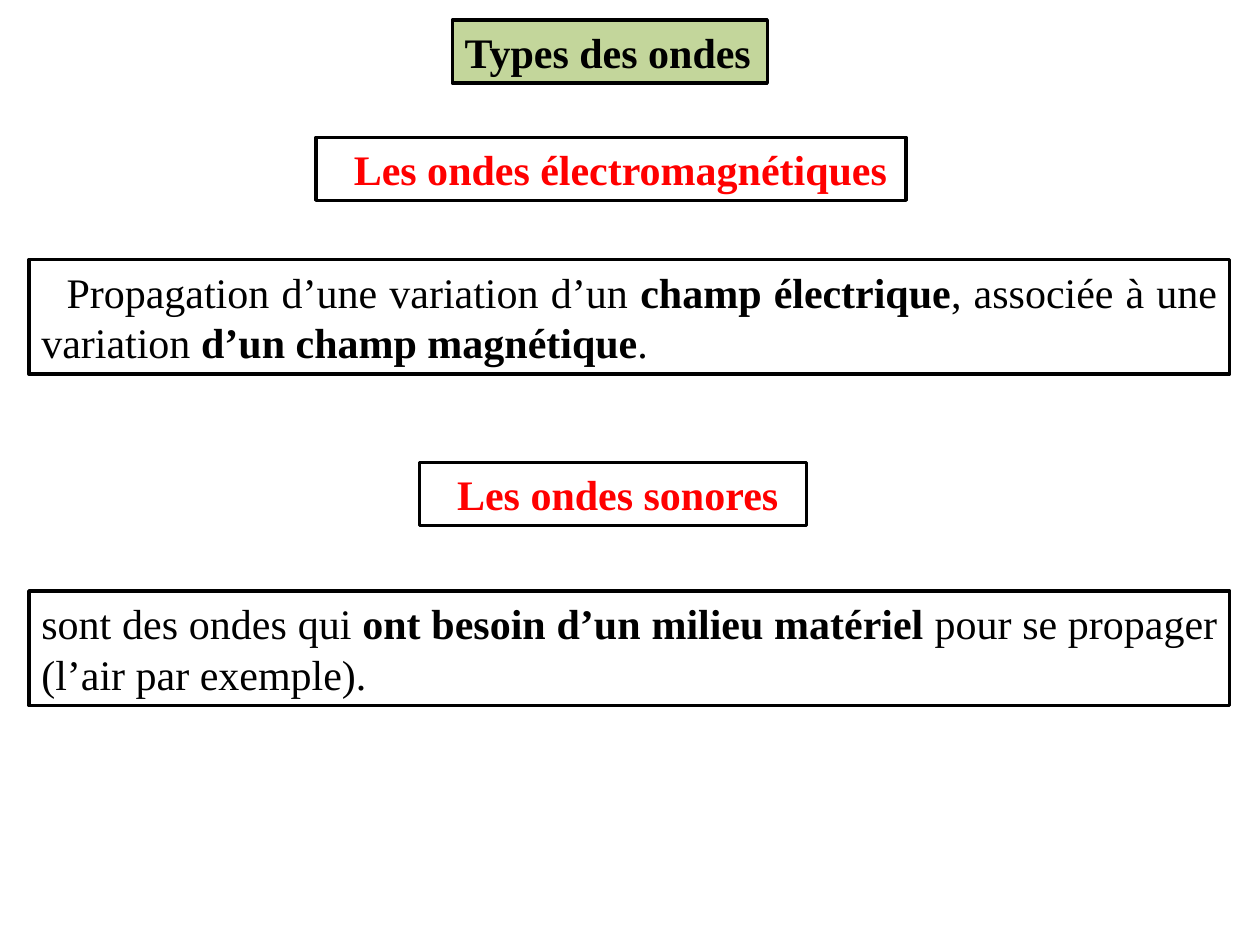
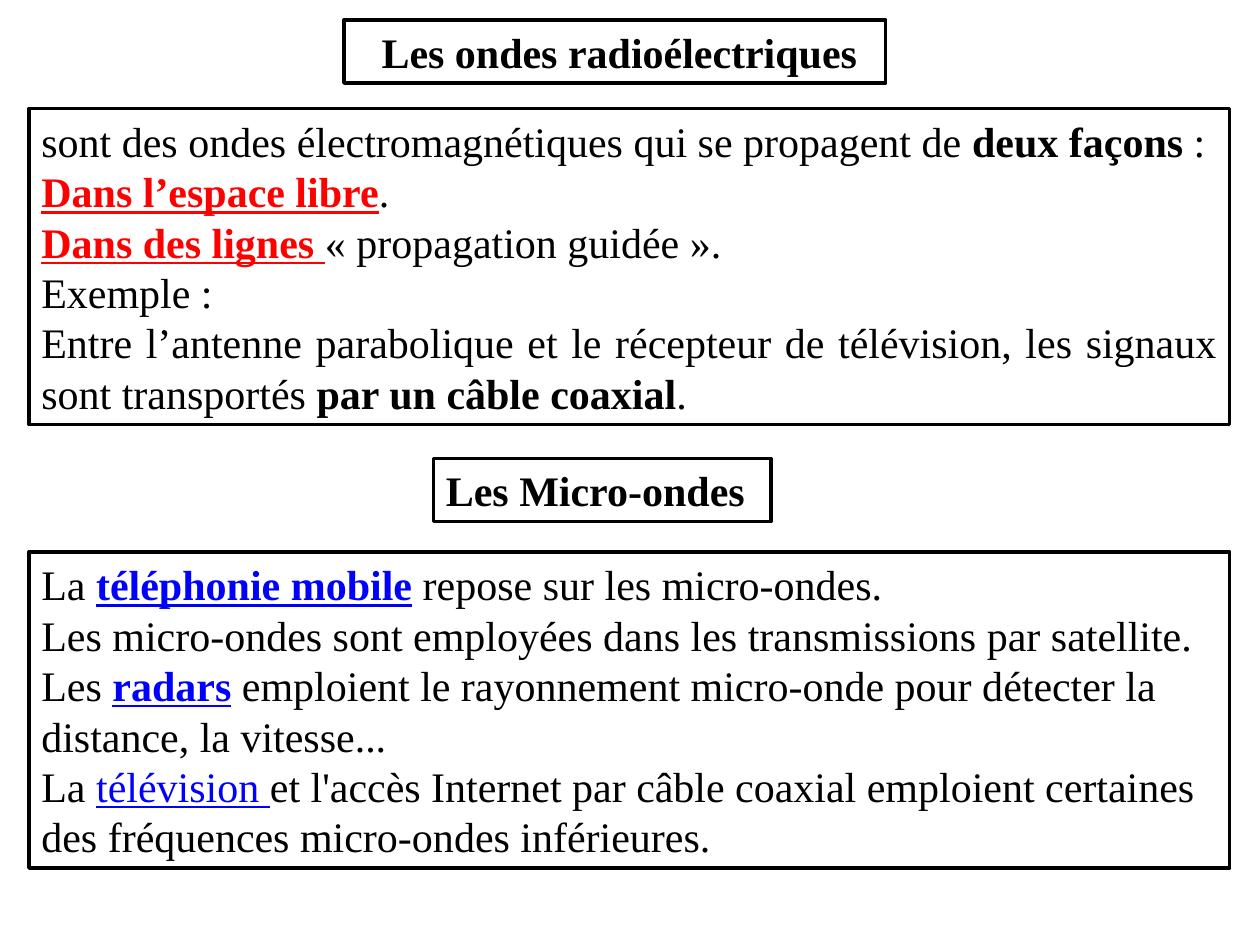
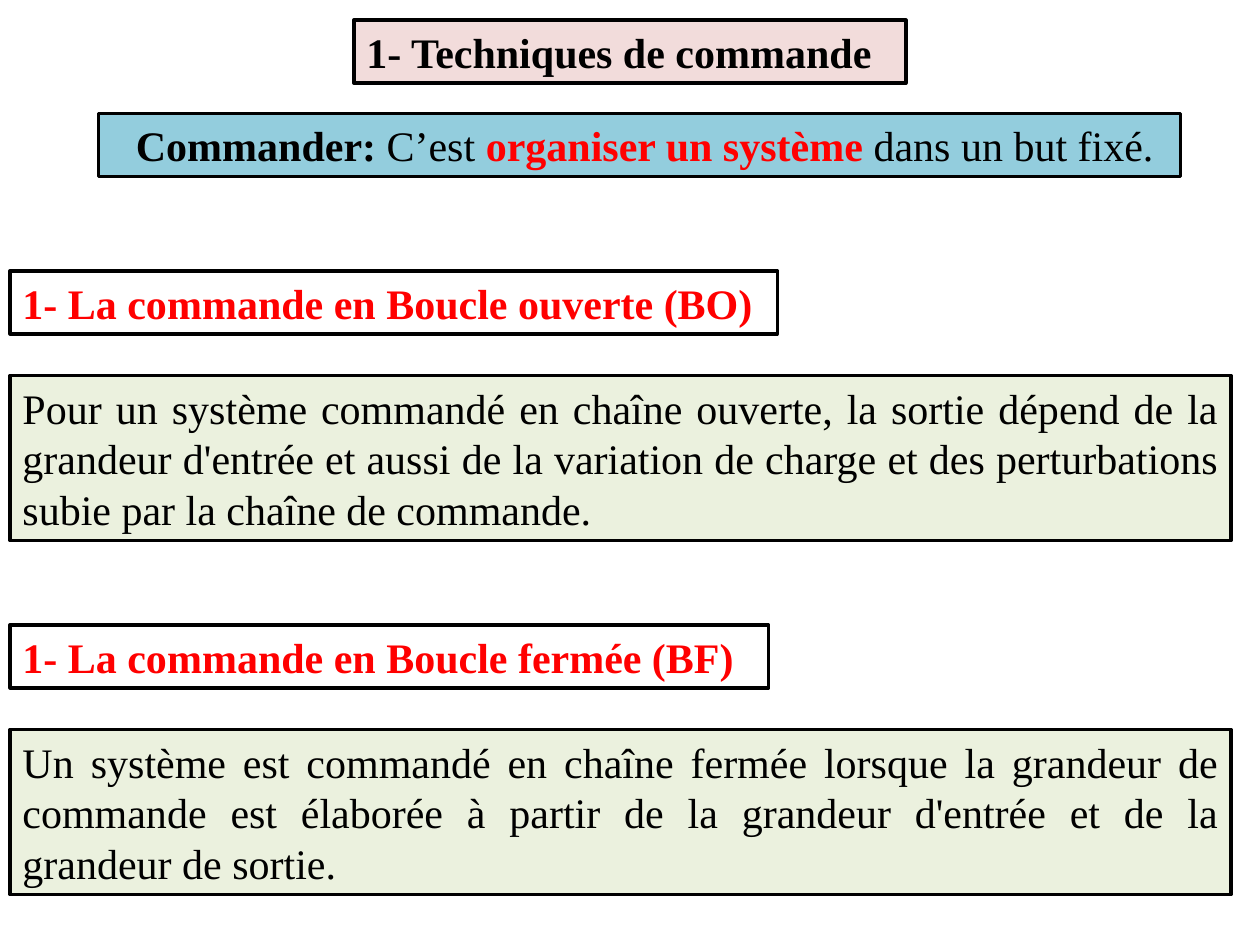
from pptx import Presentation
from pptx.dml.color import RGBColor
from pptx.enum import shapes, text
from pptx.util import Inches, Pt

COLORS = {
    "black": "000000", "white": "FFFFFF", "red": "FF0000", "blue": "0000FF",
    "green": "C3D69B", "pale_green": "EBF1DE", "pink": "F2DCDB", "sky": "93CDDD",
}
FONT = "Times New Roman"
TITLE_TOP = 0.16
HEADING_HEIGHT = 0.5
LINE_HEIGHT = 0.4
BODY_PADDING = 0.11
FIRST_LINE_INDENT = 0.2

# Run styles: colour, bold, underline
PLAIN = ("black", False, False)
BOLD = ("black", True, False)
RED = ("red", True, False)
RED_KEY = ("red", True, True)
BLUE_KEY = ("blue", True, True)
BLUE_TERM = ("blue", False, True)


def rgb(name):
    return RGBColor.from_string(COLORS[name])


def framed_text(slide, box, paragraphs, fill="white", justify=False, indent=False):
    """Black-framed rectangle; each paragraph is a list of (words, style)."""
    frame = slide.shapes.add_shape(shapes.MSO_SHAPE.RECTANGLE, *map(Inches, box))
    frame.shadow.inherit = False
    frame.fill.solid()
    frame.fill.fore_color.rgb = rgb(fill)
    frame.line.color.rgb = rgb("black")
    frame.line.width = Pt(2)
    content = frame.text_frame
    content.word_wrap = True
    content.vertical_anchor = text.MSO_ANCHOR.MIDDLE
    for number, runs in enumerate(paragraphs):
        paragraph = content.add_paragraph() if number else content.paragraphs[0]
        paragraph.alignment = text.PP_ALIGN.JUSTIFY if justify else text.PP_ALIGN.LEFT
        if indent:
            properties = paragraph._p.get_or_add_pPr()
            properties.set("marL", "0")
            properties.set("indent", str(Inches(FIRST_LINE_INDENT)))
        for words, (color, bold, underline) in runs:
            run = paragraph.add_run()
            run.text = words
            run.font.name, run.font.size = FONT, Pt(24)
            run.font.bold, run.font.underline = bold, underline
            run.font.color.rgb = rgb(color)


def heading(slide, left, top, width, words, style=BOLD, **look):
    framed_text(slide, (left, top, width, HEADING_HEIGHT), [[(words, style)]], **look)


def body(slide, left, top, width, lines, paragraphs, **look):
    height = lines * LINE_HEIGHT + BODY_PADDING
    framed_text(slide, (left, top, width, height), paragraphs, **look)


def wave_types(slide, left, width):
    heading(slide, left + 3.36, TITLE_TOP, 2.5, "Types des ondes", fill="green")

    # Electromagnetic waves
    heading(slide, left + 2.28, 1.09, 4.68, "Les ondes électromagnétiques", RED, indent=True)
    body(slide, left, 2.06, width, 2, [[
        ("Propagation d’une variation d’un ", PLAIN),
        ("champ électrique", BOLD),
        (", associée à une variation ", PLAIN),
        ("d’un champ magnétique", BOLD),
        (".", PLAIN),
    ]], justify=True, indent=True)

    # Sound waves
    heading(slide, left + 3.1, 3.67, 3.07, "Les ondes sonores", RED, indent=True)
    body(slide, left, 4.69, width, 2, [[
        ("sont des ondes qui ", PLAIN),
        ("ont besoin d’un milieu matériel ", BOLD),
        ("pour se propager (l’air par exemple).", PLAIN),
    ]], justify=True)


def radio_and_microwaves(slide, left, width):
    # Radio waves
    heading(slide, left + 2.5, TITLE_TOP, 4.3, "Les ondes radioélectriques", indent=True)
    body(slide, left, 0.86, width, 6, [
        [("sont des ondes électromagnétiques qui se propagent de ", PLAIN),
         ("deux façons", BOLD), (" :", PLAIN)],
        [("Dans l’espace libre", RED_KEY), (".", PLAIN)],
        [("Dans des lignes ", RED_KEY), ("« propagation guidée ».", PLAIN)],
        [("Exemple :", PLAIN)],
        [("Entre l’antenne parabolique et le récepteur de télévision, "
          "les signaux sont transportés ", PLAIN),
         ("par un câble coaxial", BOLD), (".", PLAIN)],
    ], justify=True)

    # Microwaves
    heading(slide, left + 3.21, 3.64, 2.68, "Les Micro-ondes")
    body(slide, left, 4.38, width, 6, [
        [("La ", PLAIN), ("téléphonie mobile", BLUE_KEY),
         (" repose sur les micro-ondes.", PLAIN)],
        [("Les micro-ondes sont employées dans les transmissions par satellite.", PLAIN)],
        [("Les ", PLAIN), ("radars", BLUE_KEY),
         (" emploient le rayonnement micro-onde pour détecter "
          "la distance, la vitesse...", PLAIN)],
        [("La ", PLAIN), ("télévision ", BLUE_TERM),
         ("et l'accès Internet par câble coaxial emploient certaines "
          "des fréquences micro-ondes inférieures.", PLAIN)],
    ])


def control_techniques(slide, left, width):
    heading(slide, left + 2.73, TITLE_TOP, 4.38, "1- Techniques de commande", fill="pink")

    # Definition
    framed_text(slide, (left + 0.7, 0.9, 8.59, HEADING_HEIGHT), [[
        ("Commander:", BOLD),
        (" C’est ", PLAIN),
        ("organiser un système ", RED),
        ("dans un but fixé.", PLAIN),
    ]], fill="sky", justify=True, indent=True)

    # Open and closed loop
    loops = [
        (2.15, 6.09, "1- La commande en Boucle ouverte (BO)",
         "Pour un système commandé en chaîne ouverte, la sortie dépend de la grandeur "
         "d'entrée et aussi de la variation de charge et des perturbations subie par "
         "la chaîne de commande."),
        (4.96, 6.02, "1- La commande en Boucle fermée (BF)",
         "Un système est commandé en chaîne fermée lorsque la grandeur de commande est "
         "élaborée à partir de la grandeur d'entrée et de la grandeur de sortie."),
    ]
    for top, heading_width, name, explanation in loops:
        heading(slide, left, top, heading_width, name, RED)
        body(slide, left, top + 0.83, width, 3, [[(explanation, PLAIN)]],
             fill="pale_green", justify=True)


def main():
    deck = Presentation()
    deck.slide_width, deck.slide_height = Inches(10), Inches(7.5)
    for build, left, width in (
        (wave_types, 0.23, 9.53),
        (radio_and_microwaves, 0.23, 9.53),
        (control_techniques, 0.08, 9.69),
    ):
        build(deck.slides.add_slide(deck.slide_layouts[6]), left, width)
    deck.save("out.pptx")


if __name__ == "__main__":
    main()
